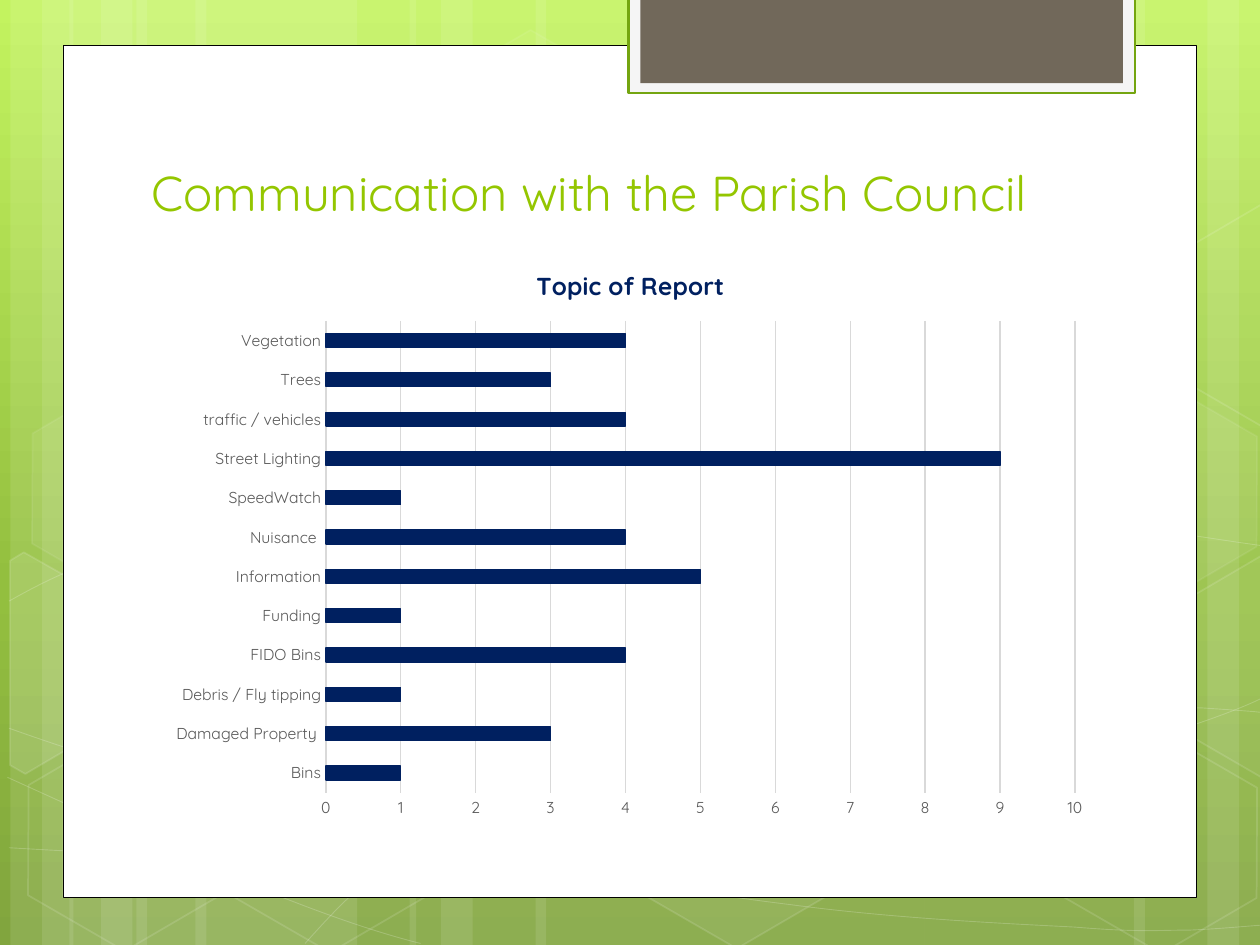
from copy import deepcopy
from math import cos, radians, sin

from lxml import etree
from pptx import Presentation
from pptx.chart.data import CategoryChartData
from pptx.dml.color import RGBColor
from pptx.enum.chart import XL_CHART_TYPE, XL_TICK_MARK
from pptx.enum.shapes import MSO_SHAPE
from pptx.enum.text import MSO_ANCHOR
from pptx.oxml.ns import qn
from pptx.util import Cm, Pt

RECTANGLE, HEXAGON = MSO_SHAPE.RECTANGLE, MSO_SHAPE.HEXAGON
BARS = XL_CHART_TYPE.BAR_CLUSTERED
NO_TICKS = XL_TICK_MARK.NONE
BOTTOM = MSO_ANCHOR.BOTTOM

COLORS = {
    "sky": "C3F35F", "leaf": "93BF3F", "moss": "81A53E", "white": "FFFFFF",
    "black": "000000", "frame": "F5F5F5", "edge": "74A510", "stone": "71685A",
    "title": "94C600", "navy": "002060", "label": "595959", "grid": "D9D9D9",
}
FONT = "Quicksand"
TITLE_FORMAT = {"name": FONT, "size": Pt(28)}
CHART_FORMAT = {"name": FONT, "size": Pt(10)}
HEADING_FORMAT = {"name": FONT, "size": Pt(14), "bold": True}
LABEL_FORMAT = {"name": FONT, "size": Pt(9), "bold": False}
TILT = 30

# Light bands: left, width
BANDS = [(2.75, 4.45), (0.21, 1.27), (0.85, 2.12), (3.94, 4.45), (1.4, 1.27),
         (2.04, 2.12), (18.63, 4.45), (24.34, 1.27), (22.86, 2.12),
         (10.8, 7.83), (8.26, 1.27), (8.89, 2.12)]

# Bezier chains: a start, then two handles and an end for each piece
CURVES = [
    [(0.18, 17.09), (1.55, 17.17), (2.92, 17.25), (4.83, 17.22), (6.73, 17.2),
     (9.09, 17.15), (11.63, 16.89), (14.17, 16.64), (17.78, 16.15),
     (20.12, 15.67), (22.43, 15.19), (24.82, 14.43), (25.58, 14)],
    [(0.18, 12.12), (0.91, 11.71), (1.65, 11.33), (3.07, 10.95), (4.52, 10.57),
     (6.58, 10.01), (8.81, 9.83), (11.07, 9.65), (13.82, 9.63), (16.61, 9.83),
     (19.41, 10.03), (24.05, 10.82), (25.58, 11.02)],
    [(0.15, 15.67), (3.23, 17.07), (6.27, 18.47), (8.48, 19.02)],
    [(0.18, 14.68), (0.97, 14.96), (1.78, 15.24), (3.25, 15.65), (4.72, 16.03),
     (6.93, 16.66), (9.07, 17.09), (11.18, 17.53), (13.84, 17.98),
     (15.95, 18.24), (18.06, 18.52), (20.32, 18.62), (21.67, 18.69),
     (22.99, 18.8), (23.34, 18.75), (24, 18.75), (24.66, 18.72),
     (25.12, 18.67), (25.58, 18.64)],
    [(6.15, 19.02), (6.6, 18.52), (7.06, 18.01), (7.67, 17.55), (8.28, 17.09),
     (9.14, 16.59), (9.86, 16.23), (10.57, 15.88), (11, 15.72), (11.94, 15.47),
     (12.85, 15.21), (14.55, 14.86), (15.44, 14.68), (16.36, 14.5),
     (16.48, 14.5), (17.27, 14.45), (18.06, 14.38), (19.3, 14.3),
     (20.17, 14.27), (21.06, 14.25), (22.5, 14.27), (22.5, 14.27),
     (22.5, 14.27), (24.21, 14.27), (24.21, 14.27), (24.66, 14.3),
     (25.1, 14.33), (25.32, 14.35), (25.55, 14.38), (25.48, 14.35), (25.55, 14.38)],
]

# Hexagons: left, top, fill opacity, line opacity
HEXAGONS = [(8.48, 0.91, 4, 8), (12.62, 14.96, 6, 12), (0.28, 15.01, 0, 12),
            (0.36, 7.92, 7, 8), (4.42, 15.04, 0, 12), (19.13, 11.51, 10, 12),
            (21.18, 15.06, 0, 12), (21.18, 7.98, 7, 8)]

# Hexagons cut by the page edge: corners as seen, centre, fill opacity
LEFT_CUT = [(0.2, 11.3), (0.48, 11.13), (2.44, 12.24), (2.41, 14.48),
            (0.51, 15.6), (0.2, 15.42)]
RIGHT_CUT = [(23.52, 12.32), (25.43, 11.2), (25.63, 11.33), (25.63, 15.57),
             (25.45, 15.67), (23.52, 14.55)]
CUT_HEXAGONS = [(LEFT_CUT, (0.91, 13.59), 10), (RIGHT_CUT, (25.02, 13.21), 4),
                ([(x, y - 7.08) for x, y in RIGHT_CUT], (25.02, 6.13), 0)]

REPORTS = {
    "Bins": 1, "Damaged Property ": 3, "Debris / Fly tipping": 1,
    "FIDO Bins": 4, "Funding": 1, "Information": 5, "Nuisance ": 4,
    "SpeedWatch": 1, "Street Lighting": 9, "traffic / vehicles": 4,
    "Trees": 3, "Vegetation": 4,
}


def rgb(name):
    return RGBColor.from_string(COLORS[name])


def style_font(font, values, color):
    for key, value in values.items():
        setattr(font, key, value)
    font.color.rgb = rgb(color)


def set_opacity(part, percent):
    if percent < 100:
        for color in part.iter(qn("a:srgbClr")):
            etree.SubElement(color, qn("a:alpha")).set("val", str(percent * 1000))


def paint(shape, fill=None, line=None, width=1, fill_opacity=100, line_opacity=100):
    shape.shadow.inherit = False
    if fill and fill_opacity:
        shape.fill.solid()
        shape.fill.fore_color.rgb = rgb(fill)
        set_opacity(shape._element.spPr.find(qn("a:solidFill")), fill_opacity)
    else:
        shape.fill.background()
    if line:
        shape.line.color.rgb = rgb(line)
        shape.line.width = Pt(width)
        set_opacity(shape.line._ln, line_opacity)
    else:
        shape.line.fill.background()


def add_block(page, box, kind=RECTANGLE, **look):
    shape = page.shapes.add_shape(kind, *map(Cm, box))
    paint(shape, **look)
    return shape


def add_outline(page, box, points, close, **look):
    corners = [(Cm(box[0] + x), Cm(box[1] + y)) for x, y in points]
    builder = page.shapes.build_freeform(*corners[0])
    builder.add_line_segments(corners[1:], close=close)
    shape = builder.convert_to_shape()
    paint(shape, line="white", **look)
    return shape


def bend(shape):
    """Turn every three line steps into one Bezier piece."""
    steps = list(shape._element.iter(qn("a:lnTo")))
    for first in range(0, len(steps), 3):
        piece = etree.Element(qn("a:cubicBezTo"))
        steps[first].addprevious(piece)
        for step in steps[first:first + 3]:
            piece.append(step[0])
            step.getparent().remove(step)


def turn_back(point, centre):
    x, y = point[0] - centre[0], point[1] - centre[1]
    c, s = cos(radians(TILT)), sin(radians(TILT))
    return centre[0] + x * c + y * s, centre[1] - x * s + y * c


def add_backdrop(page, box):
    left, top, _, height = box
    # Gradient from top to bottom
    fill = page.background.fill
    fill.gradient()
    fill.gradient_angle = 270
    stop_list = next(page._element.iter(qn("a:gsLst")))
    stop_list.append(deepcopy(stop_list[-1]))
    for stop, name, place in zip(fill.gradient_stops, ("sky", "leaf", "moss"), (0, 0.62, 1)):
        stop.color.rgb = rgb(name)
        stop.position = place
    # Bands, curves and hexagons
    for offset, width in BANDS:
        add_block(page, (left + offset, top, width, height), fill="white", fill_opacity=10)
    for chain in CURVES:
        bend(add_outline(page, box, chain, False, width=0.5, line_opacity=20))
    for x, y, fill_opacity, line_opacity in HEXAGONS:
        hexagon = add_block(page, (left + x, top + y, 4.45, 3.86), HEXAGON, fill="white",
                            line="white", fill_opacity=fill_opacity, line_opacity=line_opacity)
        hexagon.adjustments[0] = 0.285
        hexagon.rotation = TILT
    for corners, centre, opacity in CUT_HEXAGONS:
        flat = [turn_back(corner, centre) for corner in corners]
        cut = add_outline(page, box, flat, True, fill="white", fill_opacity=opacity,
                          line_opacity=12)
        cut.rotation = TILT


def add_tab(page, box):
    left, top, width, height = box
    add_block(page, box, fill="frame", line="edge", width=1.25)
    add_block(page, (left + 0.24, top, width - 0.48, height - 0.2), fill="stone")


def add_title(page, box, text):
    frame = page.shapes.add_textbox(*map(Cm, box)).text_frame
    frame.word_wrap = True
    frame.vertical_anchor = BOTTOM
    span = frame.paragraphs[0].add_run()
    span.text = text
    style_font(span.font, TITLE_FORMAT, "title")


def add_report_chart(page, box, heading):
    data = CategoryChartData()
    data.categories = REPORTS.keys()
    data.add_series("Series 1", REPORTS.values())
    chart = page.shapes.add_chart(BARS, *map(Cm, box), data).chart
    style_font(chart.font, CHART_FORMAT, "black")
    chart.has_legend = False
    # Heading
    chart.has_title = True
    span = chart.chart_title.text_frame.paragraphs[0].add_run()
    span.text = heading
    style_font(span.font, HEADING_FORMAT, "navy")
    # Bars
    plot = chart.plots[0]
    plot.gap_width = 182
    plot.vary_by_categories = False
    bars = plot.series[0].format
    bars.fill.solid()
    bars.fill.fore_color.rgb = bars.line.color.rgb = rgb("navy")
    bars.line.width = Pt(0.75)
    # Axes
    for axis in (chart.category_axis, chart.value_axis):
        axis.major_tick_mark = axis.minor_tick_mark = NO_TICKS
        style_font(axis.tick_labels.font, LABEL_FORMAT, "label")
    values = chart.value_axis
    values.minimum_scale, values.maximum_scale, values.major_unit = 0, 10, 1
    values.format.line.fill.background()
    for line in (chart.category_axis.format.line, values.major_gridlines.format.line):
        line.color.rgb = rgb("grid")
        line.width = Pt(0.75)
    # Inner plot area as shares of the chart box
    area = next(chart._chartSpace.iter(qn("c:plotArea")))
    for old in area.findall(qn("c:layout")):
        area.remove(old)
    layout = etree.Element(qn("c:layout"))
    area.insert(0, layout)
    manual = etree.SubElement(layout, qn("c:manualLayout"))
    _, _, width, height = box
    for tag, value in (("layoutTarget", "inner"), ("xMode", "edge"), ("yMode", "edge"),
                       ("x", 3.37 / width), ("y", 1.54 / height),
                       ("w", 15.1 / width), ("h", 9.51 / height)):
        etree.SubElement(manual, qn("c:" + tag)).set("val", str(value))


def main():
    deck = Presentation()
    deck.slide_width, deck.slide_height = Cm(25.4), Cm(19.05)
    page = deck.slides.add_slide(deck.slide_layouts[6])
    add_backdrop(page, (0, 0, 25.4, 19.05))
    add_block(page, (1.27, 0.91, 22.86, 17.19), fill="white", line="black", width=0.5)
    add_tab(page, (12.67, -0.05, 10.21, 1.93))
    add_title(page, (2.81, 2.9, 19.51, 1.68), "Communication with the Parish Council")
    add_report_chart(page, (3.2, 4.93, 19.02, 11.81), "Topic of Report")
    deck.save("out.pptx")


if __name__ == "__main__":
    main()
